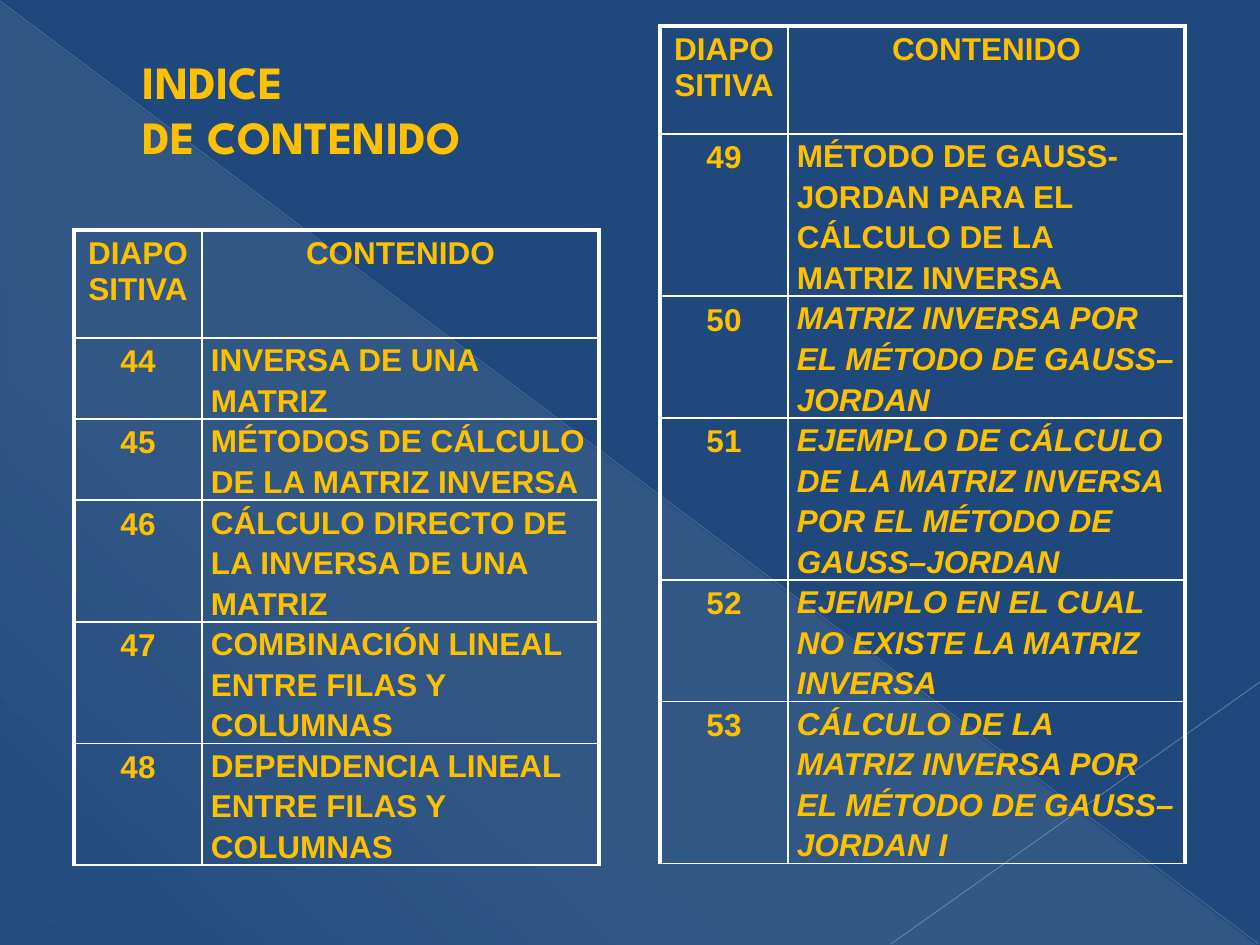
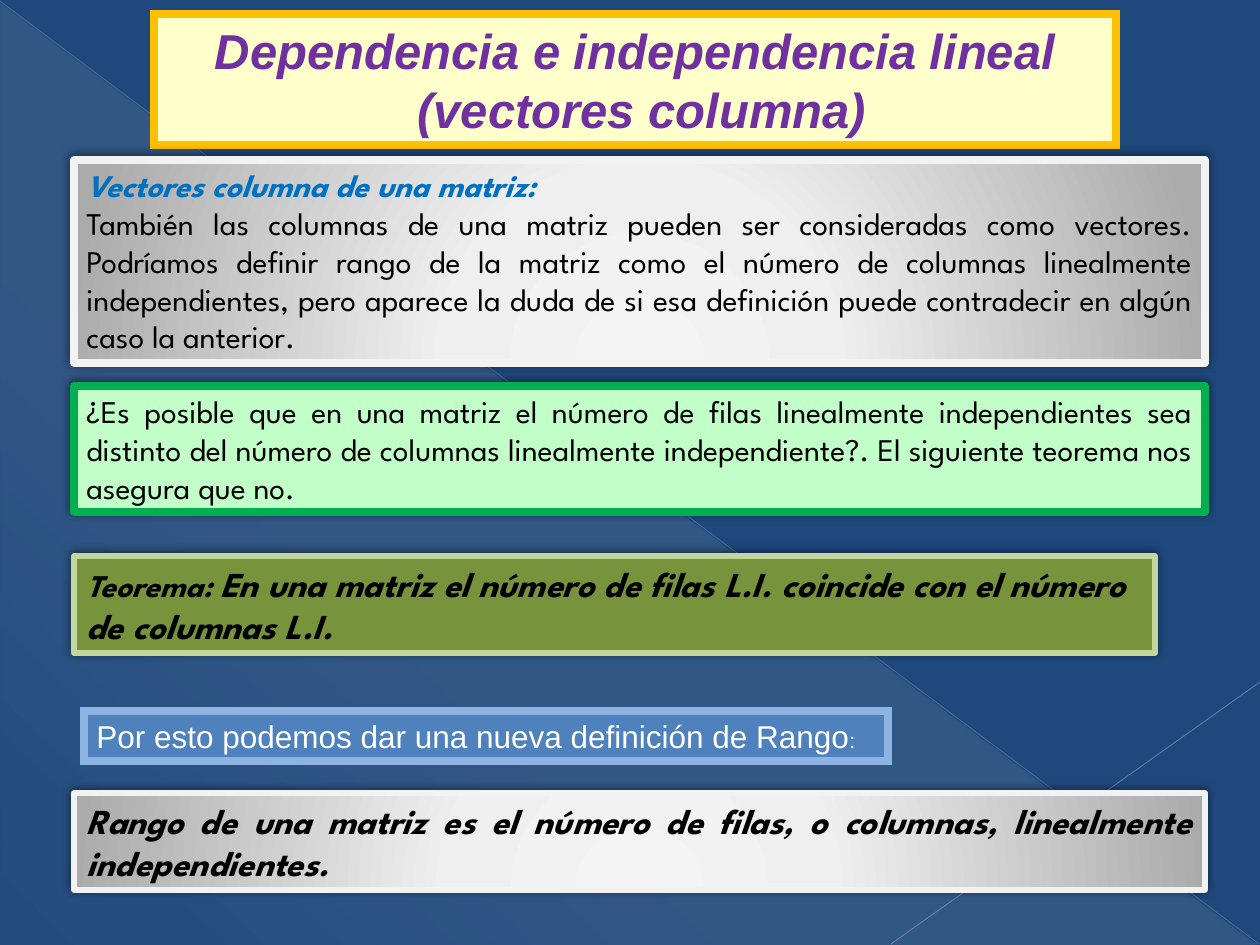
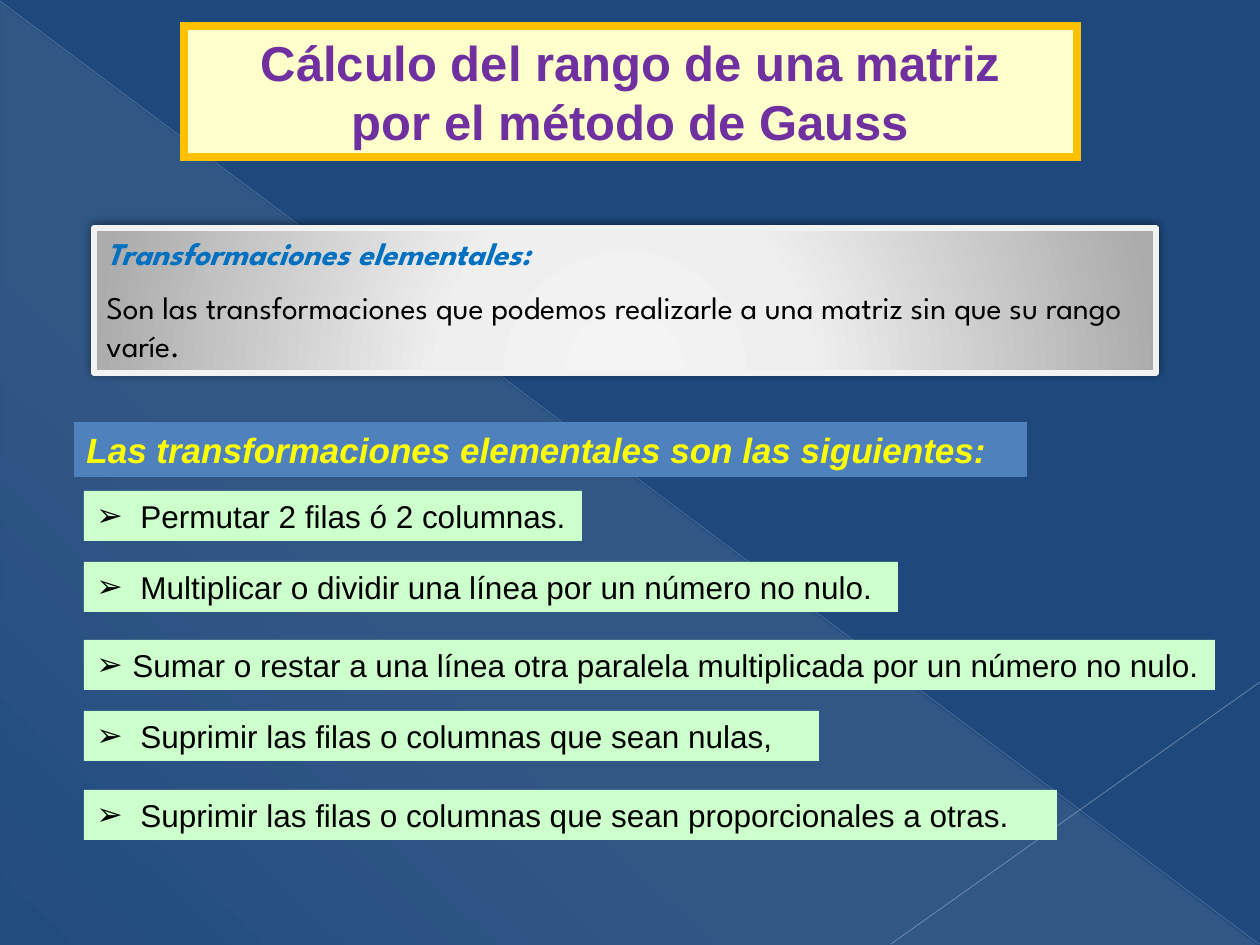
from lxml.etree import SubElement
from pptx import Presentation
from pptx.dml.color import RGBColor
from pptx.enum.shapes import MSO_CONNECTOR as CONNECTOR, MSO_SHAPE as SHAPE
from pptx.enum.text import MSO_ANCHOR as ANCHOR, PP_ALIGN as ALIGN
from pptx.oxml import parse_xml
from pptx.oxml.ns import nsdecls, qn
from pptx.util import Emu, Pt

NAVY = RGBColor(0x1F, 0x49, 0x7D)
WHITE = RGBColor(0xFF, 0xFF, 0xFF)
BLACK = RGBColor(0x00, 0x00, 0x00)
GOLD = RGBColor(0xFF, 0xC0, 0x00)
YELLOW = RGBColor(0xFF, 0xFF, 0x00)
CREAM = RGBColor(0xFF, 0xFF, 0xCC)
PURPLE = RGBColor(0x70, 0x30, 0xA0)
SKY = RGBColor(0x00, 0x70, 0xC0)
BLUE = RGBColor(0x4F, 0x81, 0xBD)
PALE_BLUE = RGBColor(0x8E, 0xB4, 0xE3)
GREEN = RGBColor(0x00, 0xB0, 0x50)
MINT = RGBColor(0xC2, 0xFE, 0xC8)
LIGHT_GREEN = RGBColor(0xCC, 0xFF, 0xCC)
OLIVE = RGBColor(0x77, 0x93, 0x3C)
PALE_OLIVE = RGBColor(0xC3, 0xD6, 0x9B)
SILVER = RGBColor(0xF2, 0xF2, 0xF2)
RAY = RGBColor(0xAD, 0xB6, 0xCE)
PALE_RAY = RGBColor(0xB6, 0xBE, 0xD3)

SPARTAN = "League Spartan"
INDEX_TITLE = (26.4, SPARTAN, GOLD, True, False)
TITLE = (28, "Arial", PURPLE, True, False)
TITLE_ITALIC = (28, "Arial", PURPLE, True, True)
HEADING = (18, SPARTAN, SKY, True, True)
BODY = (18, SPARTAN, BLACK, False, False)
LABEL = (18, SPARTAN, BLACK, True, True)
STATEMENT = (20, SPARTAN, BLACK, True, True)
INTRO = (18, "Arial", WHITE, False, False)
INTRO_COLON = (12, "Arial", WHITE, False, False)
LIST_HEADING = (20, "Arial", YELLOW, True, True)
ITEM = (18, "Arial", BLACK, False, False)

WASH = f"""<a:gradFill {nsdecls("a")}><a:gsLst>
<a:gs pos="0"><a:srgbClr val="EEECE1"><a:alpha val="10000"/></a:srgbClr></a:gs>
<a:gs pos="70000"><a:srgbClr val="EEECE1"><a:alpha val="8000"/></a:srgbClr></a:gs>
<a:gs pos="100000"><a:srgbClr val="EEECE1"><a:alpha val="1000"/></a:srgbClr></a:gs>
</a:gsLst><a:lin ang="7980000" scaled="0"/></a:gradFill>"""
METAL = f"""<a:gradFill {nsdecls("a")}><a:gsLst>
<a:gs pos="0"><a:srgbClr val="F4F4F4"/></a:gs>
<a:gs pos="34000"><a:srgbClr val="EFEFEF"/></a:gs>
<a:gs pos="100000"><a:srgbClr val="ABABAB"/></a:gs>
</a:gsLst><a:path path="circle"><a:fillToRect l="50000" t="155000" r="50000" b="-55000"/></a:path></a:gradFill>"""
SHADOW = f"""<a:outerShdw {nsdecls("a")} blurRad="63500" dist="25400" dir="14700000" algn="tl" rotWithShape="0">
<a:srgbClr val="000000"><a:alpha val="50000"/></a:srgbClr></a:outerShdw>"""


def px(length):
    return Emu(round(length * 914400 / 126))


def add_box(slide, place, fill, line, paragraphs, shadow=False, kind=SHAPE.RECTANGLE):
    shape = slide.shapes.add_shape(kind, *map(px, place))
    properties = shape.element.spPr
    if isinstance(fill, str):
        properties.insert(2, parse_xml(fill))
    elif fill is None:
        shape.fill.background()
    else:
        shape.fill.solid()
        shape.fill.fore_color.rgb = fill
    if line is None:
        shape.line.fill.background()
    else:
        shape.line.color.rgb, shape.line.width = line[0], Pt(line[1])
        if not shadow:
            SubElement(properties.find(qn("a:ln")), qn("a:miter"), lim="800000")
    shape.shadow.inherit = False
    if shadow:
        properties.find(qn("a:effectLst")).append(parse_xml(SHADOW))
    frame = shape.text_frame
    frame.word_wrap = True
    frame.vertical_anchor = ANCHOR.TOP
    for number, (alignment, runs) in enumerate(paragraphs):
        paragraph = frame.add_paragraph() if number else frame.paragraphs[0]
        paragraph.alignment = alignment
        for text, (size, font, color, bold, italic) in runs:
            run = paragraph.add_run()
            run.text = text
            run.font.size, run.font.name = Pt(size), font
            run.font.color.rgb = color
            run.font.bold, run.font.italic = bold, italic
    return shape


presentation = Presentation()
presentation.slide_width, presentation.slide_height = px(1260), px(945)
background = presentation.slide_master.background.fill
background.solid()
background.fore_color.rgb = NAVY
layout = presentation.slide_layouts[6]
index_slide, dependence_slide, gauss_slide = [presentation.slides.add_slide(layout) for _ in range(3)]

backdrop = [add_box(index_slide, (1, 3, 1257, 943), WASH, None, [], kind=SHAPE.RIGHT_TRIANGLE)]
for ends, color, width, opacity in (
    ((0, 1, 1259, 944), RAY, 0.39, 35),
    ((1260, 682, 891, 944), PALE_RAY, 0.47, 45),
):
    ray = index_slide.shapes.add_connector(CONNECTOR.STRAIGHT, *map(px, ends))
    ray.line.color.rgb, ray.line.width = color, Pt(width)
    properties = ray.element.spPr
    SubElement(properties.find(".//" + qn("a:srgbClr")), qn("a:alpha"), val=str(opacity * 1000))
    SubElement(properties, qn("a:effectLst"))
    backdrop.append(ray)
for shape in backdrop:
    layout.element.cSld.spTree.append(shape.element)

index_title = add_box(index_slide, (63, 47, 428, 137), None, None, [
    (ALIGN.LEFT, [("INDICE", INDEX_TITLE)]),
    (ALIGN.LEFT, [("DE CONTENIDO", INDEX_TITLE)]),
])
index_title.text_frame.margin_left = px(80)

HEADER = ("DIAPOSITIVA", "CONTENIDO", False)
for left, top, height, entries in (
    (74, 230, 655, [
        HEADER,
        ("44", "INVERSA DE UNA MATRIZ", False),
        ("45", "MÉTODOS DE CÁLCULO DE LA MATRIZ INVERSA", False),
        ("46", "CÁLCULO DIRECTO DE LA INVERSA DE UNA MATRIZ", False),
        ("47", "COMBINACIÓN LINEAL ENTRE FILAS Y COLUMNAS", False),
        ("48", "DEPENDENCIA LINEAL ENTRE FILAS Y COLUMNAS", False),
    ]),
    (660, 26, 872, [
        HEADER,
        ("49", "MÉTODO DE GAUSS-JORDAN PARA EL CÁLCULO DE LA MATRIZ INVERSA", False),
        ("50", "MATRIZ INVERSA POR EL MÉTODO DE GAUSS–JORDAN", True),
        ("51", "EJEMPLO DE CÁLCULO DE LA MATRIZ INVERSA POR EL MÉTODO DE GAUSS–JORDAN", True),
        ("52", "EJEMPLO EN EL CUAL NO EXISTE LA MATRIZ INVERSA", True),
        ("53", "CÁLCULO DE LA MATRIZ INVERSA POR EL MÉTODO DE GAUSS–JORDAN I", True),
    ]),
):
    table_frame = index_slide.shapes.add_table(len(entries), 2, px(left), px(top), px(525), px(height))
    table = table_frame.table
    table.first_row = table.horz_banding = False
    table.columns[0].width, table.columns[1].width = px(128), px(397)
    for row, (number, topic, italic) in enumerate(entries):
        table.rows[row].height = px(57 if row else 108)
        for column, text in enumerate((number, topic)):
            cell = table.cell(row, column)
            paragraph = cell.text_frame.paragraphs[0]
            paragraph.alignment = ALIGN.CENTER
            if row and column:
                paragraph.alignment = ALIGN.LEFT
                paragraph.line_spacing = 1.15
                cell.margin_left = cell.margin_right = px(9)
                cell.margin_top = cell.margin_bottom = 0
            run = paragraph.add_run()
            run.text = text
            run.font.size, run.font.name = Pt(18), "Arial"
            run.font.color.rgb = GOLD
            run.font.bold, run.font.italic = True, italic and column == 1
            cell_properties = cell._tc.get_or_add_tcPr()
            for side, outer in (("L", column == 0), ("R", column == 1), ("T", row == 0), ("B", False)):
                width = Pt(2.25 if outer else 1)
                cell_properties.append(parse_xml(
                    f'<a:ln{side} {nsdecls("a")} w="{width}"><a:solidFill>'
                    f'<a:srgbClr val="{WHITE}"/></a:solidFill></a:ln{side}>'))
            cell.fill.background()
    table_frame.height = px(height)

add_box(dependence_slide, (74, 556, 1081, 97), OLIVE, (PALE_OLIVE, 3), [
    (ALIGN.LEFT, [
        ("Teorema: ", LABEL),
        ("En una matriz el número de filas L.I. coincide con el número de columnas L.I.", STATEMENT),
    ]),
], shadow=True)
add_box(dependence_slide, (154, 14, 962, 131), CREAM, (GOLD, 4.5), [
    (ALIGN.CENTER, [("Dependencia e independencia lineal", TITLE_ITALIC)]),
    (ALIGN.CENTER, [(" (vectores columna)", TITLE_ITALIC)]),
])
add_box(dependence_slide, (74, 160, 1131, 203), METAL, (SILVER, 4.5), [
    (ALIGN.LEFT, [("Vectores columna de una matriz:", HEADING)]),
    (ALIGN.JUSTIFY, [(
        "También las columnas de una matriz pueden ser consideradas como vectores. "
        "Podríamos definir rango de la matriz como el número de columnas linealmente "
        "independientes, pero aparece la duda de si esa definición puede contradecir "
        "en algún caso la anterior.", BODY)]),
], shadow=True)
add_box(dependence_slide, (74, 386, 1131, 126), MINT, (GREEN, 4.5), [
    (ALIGN.JUSTIFY, [(
        "¿Es posible que en una matriz el número de filas linealmente independientes sea "
        "distinto del número de columnas linealmente independiente?. El siguiente teorema "
        "nos asegura que no.", BODY)]),
], shadow=True)
add_box(dependence_slide, (84, 711, 804, 50), BLUE, (PALE_BLUE, 4.5), [
    (ALIGN.JUSTIFY, [
        ("Por esto podemos dar una nueva definición de Rango", INTRO),
        (":", INTRO_COLON),
    ]),
])
add_box(dependence_slide, (74, 793, 1131, 97), METAL, (SILVER, 3), [
    (ALIGN.JUSTIFY, [(
        "Rango de una matriz es el número de filas, o columnas, linealmente independientes.",
        STATEMENT)]),
], shadow=True)

add_box(gauss_slide, (184, 26, 893, 131), CREAM, (GOLD, 4.5), [
    (ALIGN.CENTER, [("Cálculo del rango de una matriz", TITLE)]),
    (ALIGN.CENTER, [("por el método de Gauss", TITLE)]),
])
definition = add_box(gauss_slide, (94, 228, 1062, 145), METAL, (SILVER, 3), [
    (ALIGN.LEFT, [("Transformaciones elementales:", HEADING)]),
    (ALIGN.LEFT, [(
        "Son las transformaciones que podemos realizarle a una matriz sin que su rango varíe.",
        BODY)]),
], shadow=True)
definition.text_frame.paragraphs[1].space_before = Pt(9)
add_box(gauss_slide, (74, 422, 953, 55), BLUE, None, [
    (ALIGN.LEFT, [("Las transformaciones elementales son las siguientes:", LIST_HEADING)]),
])
for top, width, indent, text in (
    (491, 498, 44, "Permutar 2 filas ó 2 columnas."),
    (562, 814, 44, "Multiplicar o dividir una línea por un número no nulo."),
    (640, 1131, 36, "Sumar o restar a una línea otra paralela multiplicada por un número no nulo."),
    (711, 735, 44, "Suprimir las filas o columnas que sean nulas,"),
    (790, 973, 44, "Suprimir las filas o columnas que sean proporcionales a otras."),
):
    item = add_box(gauss_slide, (84, top, width, 50), LIGHT_GREEN, None, [(ALIGN.LEFT, [(text, ITEM)])])
    paragraph_properties = item.text_frame.paragraphs[0]._p.get_or_add_pPr()
    paragraph_properties.set("marL", str(px(indent)))
    paragraph_properties.set("indent", str(-px(indent)))
    SubElement(paragraph_properties, qn("a:buFont"), typeface="Arial")
    SubElement(paragraph_properties, qn("a:buChar"), char="➢")

presentation.save("out.pptx")
